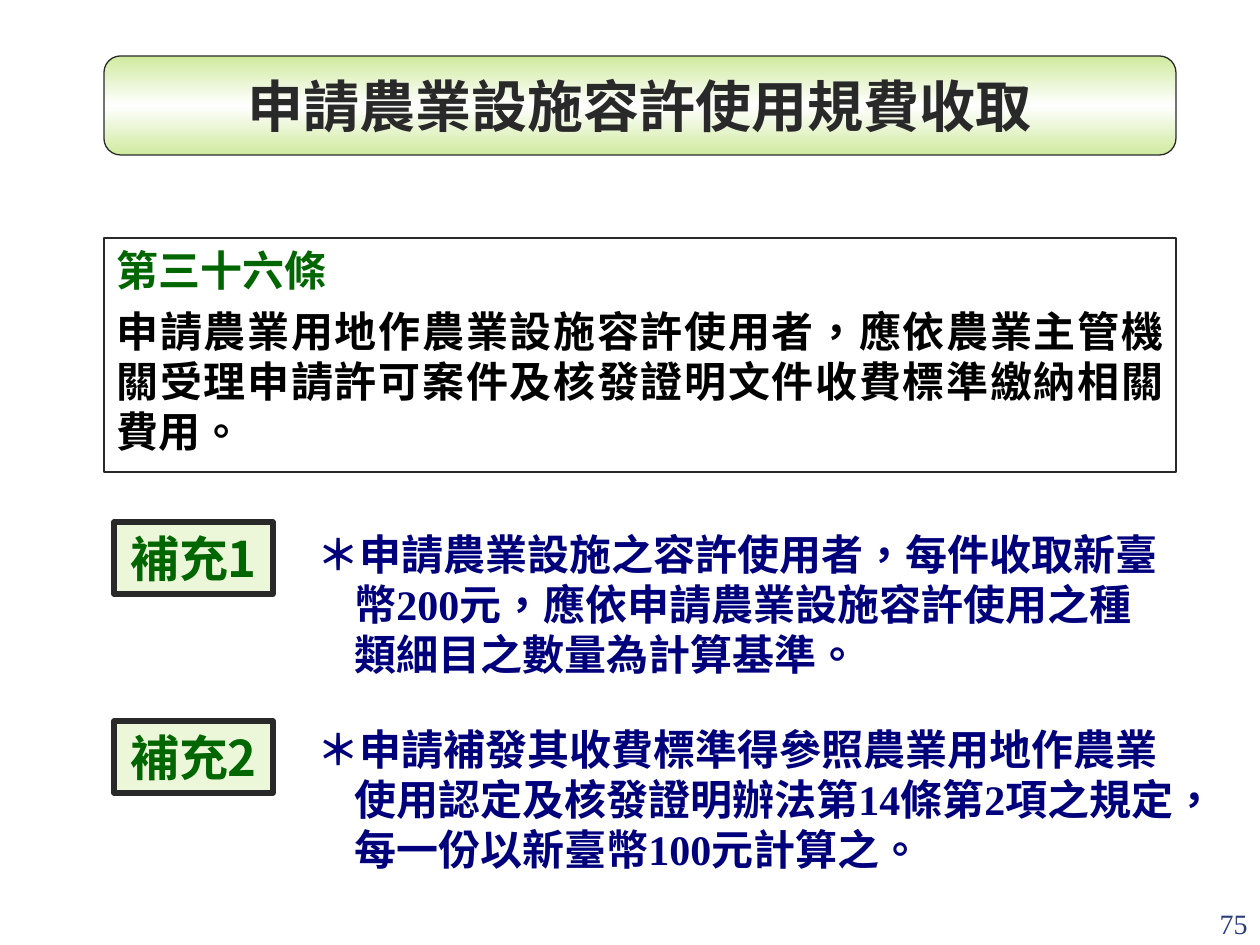
from copy import deepcopy

from pptx import Presentation
from pptx.dml.color import RGBColor
from pptx.enum.lang import MSO_LANGUAGE_ID as Language
from pptx.enum.shapes import MSO_SHAPE as Shape
from pptx.enum.text import MSO_ANCHOR as Anchor, PP_ALIGN as Align
from pptx.util import Emu, Pt

SCALE = 914400 / 126
SERIF, SANS = "Times New Roman", "Noto Sans CJK SC"
COLORS = {
    "ink": "292929", "black": "000000", "green": "006600", "navy": "00007D",
    "number": "2A3D7A", "lime": "CFEA9E", "pale": "ECF7D9", "white": "FFFFFF",
}

TITLE = "申請農業設施容許使用規費收取"
ARTICLE = [
    ("第三十六條", "green"),
    ("申請農業用地作農業設施容許使用者，應依農業主管機關受理申請許可案件及核發證明文件收費標準繳納相關費用。", "black"),
]
NOTES = [
    ("補充1", (114, 522, 159, 72), (305, 522, 871, 165),
     "＊申請農業設施之容許使用者，每件收取新臺幣200元，應依申請農業設施容許使用之種類細目之數量為計算基準。"),
    ("補充2", (114, 721, 159, 72), (305, 717, 881, 165),
     "＊申請補發其收費標準得參照農業用地作農業使用認定及核發證明辦法第14條第2項之規定，每一份以新臺幣100元計算之。"),
]
PAGE_NUMBER = "75"


def px(length):
    return Emu(round(length * SCALE))


def rgb(name):
    return RGBColor.from_string(COLORS[name])


def write(paragraph, text, size, color, align=Align.LEFT, font=SERIF, bold=True):
    paragraph.text = text
    paragraph.alignment = align
    for run in paragraph.runs:
        run.font.name = font
        run.font.size = Pt(size)
        run.font.bold = bold
        run.font.color.rgb = rgb(color)
        run.font.language_id = Language.TRADITIONAL_CHINESE


def add_box(slide, box, line_width, kind=Shape.RECTANGLE, anchor=Anchor.MIDDLE, wrap=False):
    shape = slide.shapes.add_shape(kind, *map(px, box))
    shape.shadow.inherit = False
    shape.line.color.rgb = rgb("ink")
    shape.line.width = Pt(line_width)
    shape.text_frame.vertical_anchor = anchor
    shape.text_frame.word_wrap = wrap
    return shape


def add_text(slide, box, anchor=Anchor.TOP):
    frame = slide.shapes.add_textbox(*map(px, box)).text_frame
    frame.word_wrap = True
    frame.vertical_anchor = anchor
    return frame


def fill_gradient(shape, names):
    shape.fill.gradient()
    shape.fill.gradient_angle = 90
    first_stop = shape._element.spPr.xpath(".//a:gs")[0]
    for _ in names[2:]:
        first_stop.addnext(deepcopy(first_stop))
    for index, (stop, name) in enumerate(zip(shape.fill.gradient_stops, names)):
        stop.position = index / (len(names) - 1)
        stop.color.rgb = rgb(name)


def main():
    presentation = Presentation()
    presentation.slide_width, presentation.slide_height = px(1260), px(945)
    slide = presentation.slides.add_slide(presentation.slide_layouts[6])

    number = add_text(slide, (1134, 883, 126, 63), Anchor.BOTTOM)
    write(number.paragraphs[0], PAGE_NUMBER, 16, "number", Align.RIGHT, bold=False)

    title = add_box(slide, (104, 56, 1072, 99), 0.75, Shape.ROUNDED_RECTANGLE)
    fill_gradient(title, ["lime", "white", "lime"])
    write(title.text_frame.paragraphs[0], TITLE, 32, "ink", Align.CENTER)

    article = add_box(slide, (104, 238, 1072, 234), 1.5, anchor=Anchor.TOP, wrap=True)
    article.fill.background()
    for index, (text, color) in enumerate(ARTICLE):
        frame = article.text_frame
        paragraph = frame.add_paragraph() if index else frame.paragraphs[0]
        write(paragraph, text, 24, color, Align.JUSTIFY)
        paragraph.space_before = Pt(6 if index else 0)

    for label, label_box, note_box, note in NOTES:
        tag = add_box(slide, label_box, 3)
        tag.fill.solid()
        tag.fill.fore_color.rgb = rgb("pale")
        write(tag.text_frame.paragraphs[0], label, 28, "green", Align.CENTER, SANS)

        paragraph = add_text(slide, note_box).paragraphs[0]
        properties = paragraph._p.get_or_add_pPr()
        properties.set("marL", str(px(37)))
        properties.set("indent", str(px(-37)))
        write(paragraph, note, 24, "navy")

    presentation.save("out.pptx")


if __name__ == "__main__":
    main()
